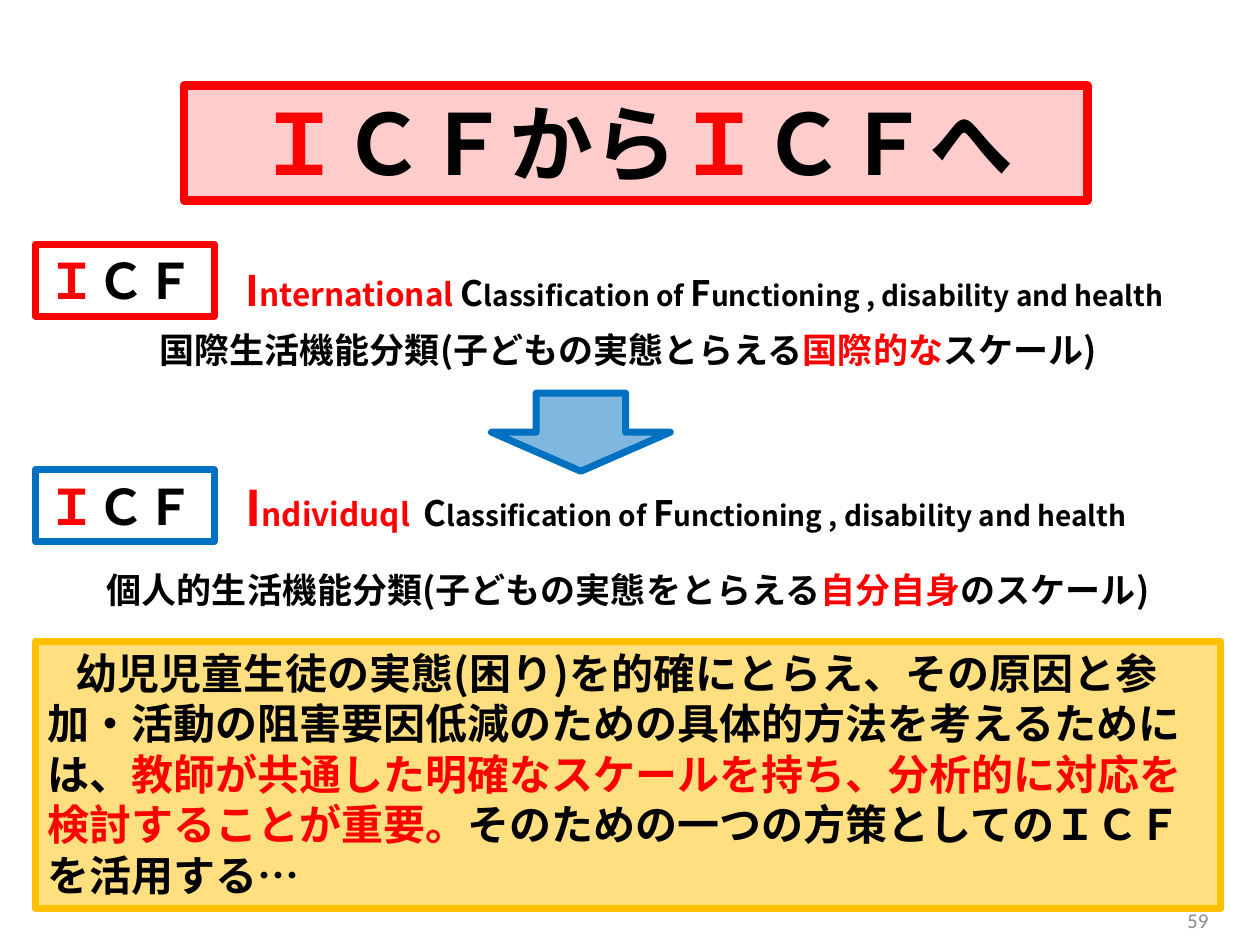
from lxml import etree
from pptx import Presentation
from pptx.dml.color import RGBColor
from pptx.enum import shapes, text
from pptx.oxml.ns import qn
from pptx.util import Inches, Pt

RED = RGBColor(0xFF, 0x00, 0x00)
BLUE = RGBColor(0x00, 0x70, 0xC0)
GOLD = RGBColor(0xFF, 0xC0, 0x00)
BLACK = RGBColor(0x00, 0x00, 0x00)
GRAY = RGBColor(0x8C, 0x8C, 0x8C)
FONT = "Noto Sans CJK JP"
LEFT, WIDE = 0.28, 9.41
SHAPE = shapes.MSO_SHAPE
ALIGN = text.PP_ALIGN
ANCHOR = text.MSO_ANCHOR


def write(shape, runs, align=ALIGN.LEFT, font=FONT, bold=True,
          anchor=ANCHOR.TOP, indent=0):
    frame = shape.text_frame
    frame.word_wrap = True
    frame.vertical_anchor = anchor
    para = frame.paragraphs[0]
    para.alignment = align
    if indent:
        para._p.get_or_add_pPr().set("indent", str(Inches(indent)))
    for words, size, color in runs:
        run = para.add_run()
        run.text = words
        run.font.size = Pt(size)
        run.font.bold = bold
        run.font.color.rgb = color
        run.font.name = font
        east = etree.SubElement(run.font._element, qn("a:ea"))
        east.set("typeface", font)


def label(slide, box, runs, **style):
    shape = slide.shapes.add_textbox(*map(Inches, box))
    write(shape, runs, **style)


def block(slide, kind, box, color, width, alpha=None):
    shape = slide.shapes.add_shape(kind, *map(Inches, box))
    shape.shadow.inherit = False
    shape.line.color.rgb = color
    shape.line.width = Pt(width)
    etree.SubElement(shape.line._ln, qn("a:round"))
    if alpha is None:
        shape.fill.background()
    else:
        shape.fill.solid()
        shape.fill.fore_color.rgb = color
        tint = shape.fill._xPr.find(qn("a:solidFill"))[0]
        etree.SubElement(tint, qn("a:alpha")).set("val", str(alpha * 1000))
    return shape


def badge(slide, top, color):
    shape = block(slide, SHAPE.RECTANGLE, (LEFT, top, 1.42, 0.57), color, 4)
    write(shape, [("Ｉ", 28, RED), ("ＣＦ", 28, BLACK)])


def term(slide, top, high, lead):
    tail = [("C", 20, BLACK), ("lassification of ", 16, BLACK),
            ("F", 20, BLACK),
            ("unctioning , disability and health", 16, BLACK)]
    label(slide, (1.85, top, 7.83, high), lead + tail)


def gloss(slide, top, start, key, end):
    runs = [(start, 20, BLACK), (key, 20, RED), (end, 20, BLACK)]
    label(slide, (LEFT, top, WIDE, 0.44), runs, align=ALIGN.CENTER)


def main():
    deck = Presentation()
    deck.slide_width, deck.slide_height = Inches(10), Inches(7.5)
    slide = deck.slides.add_slide(deck.slide_layouts[6])

    badge(slide, 1.94, RED)
    badge(slide, 3.73, BLUE)
    term(slide, 2.05, 0.5, [("I", 24, RED), ("nternational ", 18, RED)])
    term(slide, 3.74, 0.57, [("I", 28, RED), ("ndividuql ", 18, RED),
                             (" ", 16, BLACK)])
    gloss(slide, 2.56, "国際生活機能分類(子どもの実態とらえる",
          "国際的な", "スケール)")
    gloss(slide, 4.46, "個人的生活機能分類(子どもの実態をとらえる",
          "自分自身", "のスケール)")

    title = block(slide, SHAPE.RECTANGLE, (1.46, 0.68, 7.17, 0.91), RED, 5, 20)
    write(title, [("Ｉ", 48, RED), ("ＣＦから", 48, BLACK),
                  ("Ｉ", 48, RED), ("ＣＦへ", 48, BLACK)],
          align=ALIGN.CENTER)
    block(slide, SHAPE.DOWN_ARROW, (3.9, 3.12, 1.42, 0.62), BLUE, 4, 50)

    goal = block(slide, SHAPE.RECTANGLE, (LEFT, 5.09, WIDE, 2.12), GOLD, 4, 50)
    write(goal, [
        ("幼児児童生徒の実態(困り)を的確にとらえ、その原因と参加・活動の"
         "阻害要因低減のための具体的方法を考えるためには、", 24, BLACK),
        ("教師が共通した明確なスケールを持ち、分析的に対応を"
         "検討することが重要。", 24, RED),
        ("そのための一つの方策としてのＩＣＦを活用する…", 24, BLACK),
    ], indent=0.22)

    label(slide, (7.16, 7.1, 2.53, 0.4), [("59", 12, GRAY)],
          align=ALIGN.RIGHT, font="Calibri", bold=False, anchor=ANCHOR.MIDDLE)
    deck.save("out.pptx")


if __name__ == "__main__":
    main()
